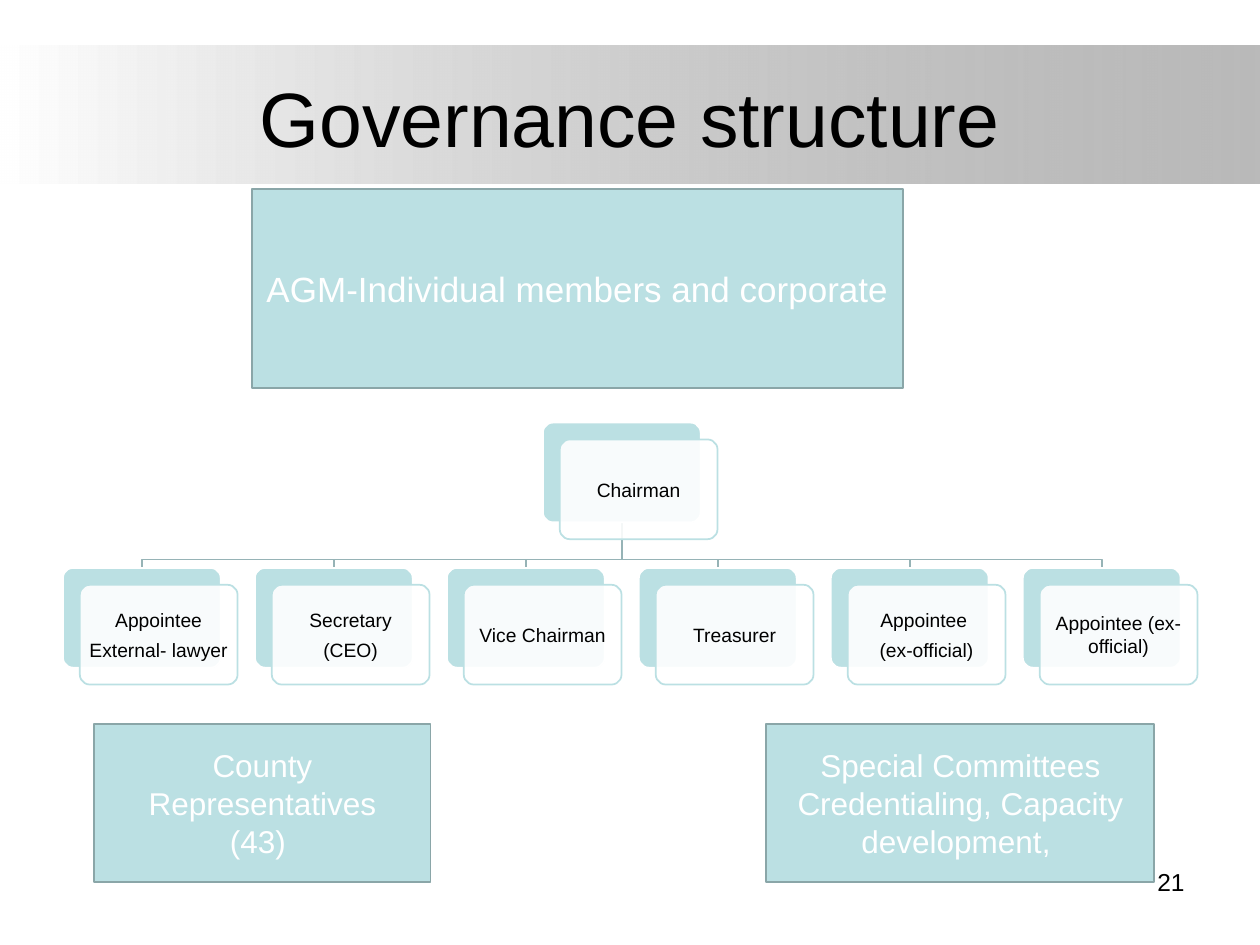
from lxml.etree import SubElement
from pptx import Presentation
from pptx.dml.color import RGBColor
from pptx.enum.shapes import MSO_SHAPE
from pptx.enum.text import MSO_ANCHOR, PP_ALIGN
from pptx.oxml.ns import qn
from pptx.util import Cm, Pt

TEAL, WHITE, BLACK = "BBE0E3", "FFFFFF", "000000"
EDGE, WIRE, GREY = "8AA6A8", "96B3B6", "808080"
WIDE, HIGH, STEP, SHIFT = 3.18, 2.01, 3.87, 0.34
LEFT, HEAD, ROW, BUS = 1.27, 8.52, 11.45, 11.28
ROLES = [
    ["Appointee", "External- lawyer"],
    ["Secretary", "(CEO)"],
    ["Vice Chairman"],
    ["Treasurer"],
    ["Appointee ", "(ex-official)"],
    ["Appointee (ex- official)"],
]
PANELS = [
    ((1.9, 14.6, 6.78, 3.18), ["County Representatives", "(43) "], 18),
    ((15.45, 14.6, 7.82, 3.18),
     ["Special Committees", "Credentialing, Capacity development, "], 18),
    ((5.08, 3.81, 13.12, 4.02), ["AGM-Individual members and corporate "], 20),
]


def color(code):
    return RGBColor.from_string(code)


def fade(node, share):
    SubElement(node, qn("a:alpha"), val=str(share * 1000))


class Deck:
    font = "Arial"

    def __init__(self):
        self.file = Presentation()
        self.file.slide_width, self.file.slide_height = Cm(25.4), Cm(19.05)
        self.slide = self.file.slides.add_slide(self.file.slide_layouts[6])
        self.shapes = self.slide.shapes

    def label(self, frame, lines, size, tint, align=PP_ALIGN.CENTER, gap=0):
        frame.word_wrap = True
        for i, line in enumerate(lines):
            para = frame.add_paragraph() if i else frame.paragraphs[0]
            para.alignment = align
            para.space_after = Pt(gap)
            run = para.add_run()
            run.text = line
            run.font.name, run.font.size = self.font, Pt(size)
            run.font.color.rgb = color(tint)

    def text(self, area, line, size, align, anchor):
        frame = self.shapes.add_textbox(*map(Cm, area)).text_frame
        frame.vertical_anchor = anchor
        self.label(frame, [line], size, BLACK, align)

    def box(self, kind, area, fill, edge):
        shape = self.shapes.add_shape(kind, *map(Cm, area))
        shape.shadow.inherit = False
        shape.fill.solid()
        shape.fill.fore_color.rgb = color(fill)
        shape.line.color.rgb = color(edge)
        shape.line.width = Pt(1)
        shape.text_frame.vertical_anchor = MSO_ANCHOR.MIDDLE
        return shape

    def band(self, area):
        shape = self.box(MSO_SHAPE.RECTANGLE, area, WHITE, WHITE)
        shape.line.fill.background()
        shape.fill.gradient()
        shape.fill.gradient_angle = 0
        for stop, tint, place in zip(shape.fill.gradient_stops, (WHITE, GREY), (0, 1)):
            stop.color.rgb = color(tint)
            stop.position = place
        fade(list(shape.element.spPr.iter(qn("a:srgbClr")))[-1], 54)

    def panel(self, area, lines, size):
        shape = self.box(MSO_SHAPE.RECTANGLE, area, TEAL, EDGE)
        self.label(shape.text_frame, lines, size, WHITE)

    def card(self, x, y, lines):
        kind = MSO_SHAPE.ROUNDED_RECTANGLE
        back = self.box(kind, (x, y, WIDE, HIGH), TEAL, WHITE)
        front = self.box(kind, (x + SHIFT, y + SHIFT, WIDE, HIGH), WHITE, TEAL)
        back.adjustments[0] = front.adjustments[0] = 0.1
        fade(next(front.element.spPr.iter(qn("a:srgbClr"))), 90)
        frame = front.text_frame
        frame.margin_left = frame.margin_right = Cm(0.07)
        frame.margin_top = frame.margin_bottom = Cm(0.07)
        self.label(frame, lines, 11, BLACK, gap=4)

    def wire(self, points):
        start, *rest = [(Cm(x), Cm(y)) for x, y in points]
        pen = self.shapes.build_freeform(*start)
        pen.add_line_segments(rest, close=False)
        shape = pen.convert_to_shape()
        shape.shadow.inherit = False
        shape.fill.background()
        shape.line.color.rgb = color(WIRE)
        shape.line.width = Pt(1)


def main():
    deck = Deck()
    deck.band((0, 0.91, 25.4, 2.8))
    deck.text((1.27, 0.76, 22.86, 3.18), "Governance structure", 44,
              PP_ALIGN.CENTER, MSO_ANCHOR.MIDDLE)
    spots = [LEFT + i * STEP for i in range(len(ROLES))]
    chair = (spots[0] + spots[-1]) / 2
    hub = chair + WIDE / 2
    for x in spots:
        end = x + WIDE / 2
        deck.wire([(hub, HEAD + HIGH), (hub, BUS), (end, BUS), (end, ROW)])
    deck.card(chair, HEAD, ["Chairman"])
    for x, lines in zip(spots, ROLES):
        deck.card(x, ROW, lines)
    for panel in PANELS:
        deck.panel(*panel)
    deck.text((18.2, 17.35, 5.93, 1.32), "21", 14, PP_ALIGN.RIGHT, MSO_ANCHOR.TOP)
    deck.file.save("out.pptx")


if __name__ == "__main__":
    main()
